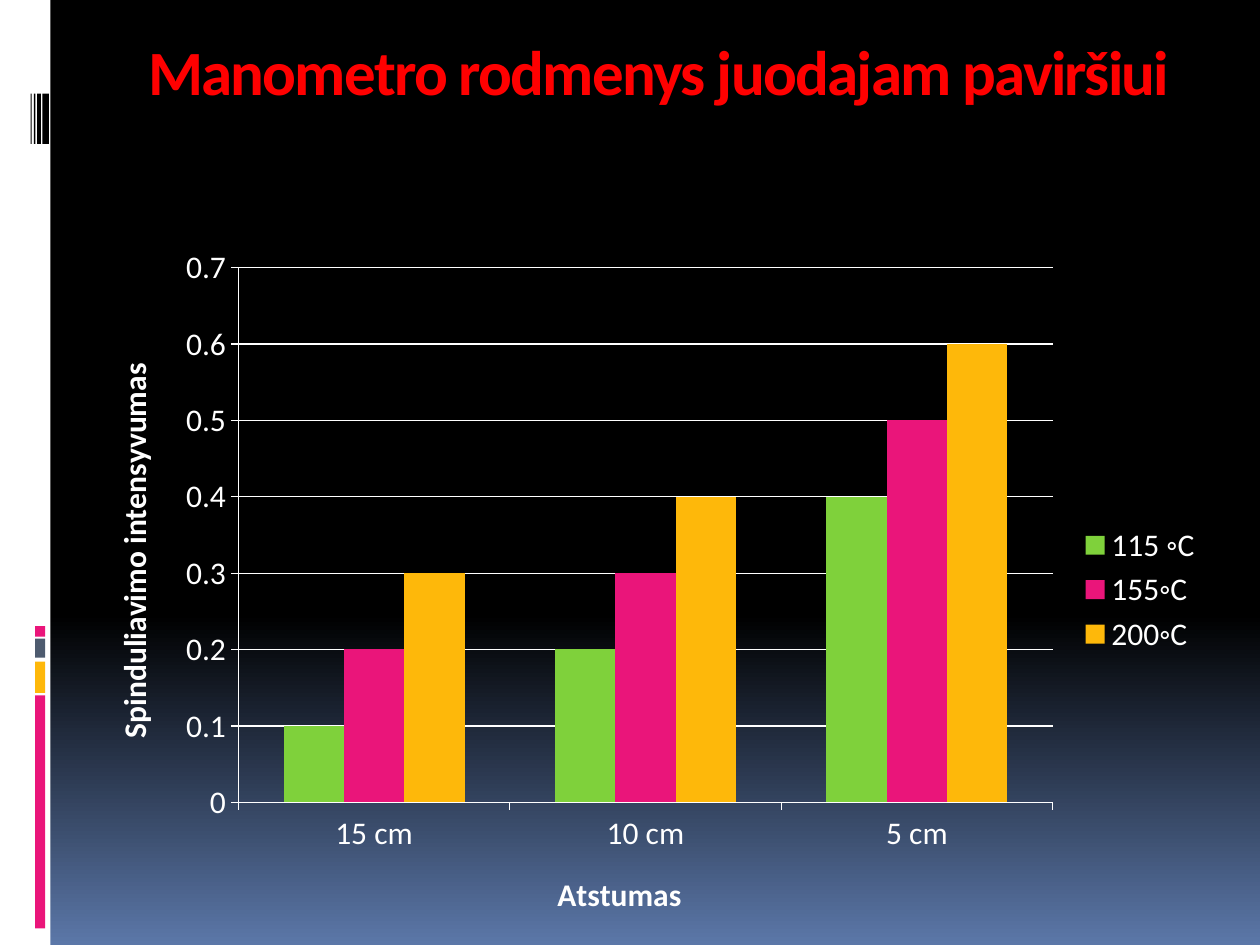
"""Build a slide with a clustered column chart of manometer readings."""
from pptx import Presentation
from pptx.chart.data import CategoryChartData
from pptx.dml.color import RGBColor
from pptx.enum.chart import XL_CHART_TYPE, XL_LEGEND_POSITION, XL_TICK_MARK
from pptx.enum.shapes import MSO_SHAPE
from pptx.enum.text import MSO_ANCHOR, PP_ALIGN
from pptx.util import Pt

RECT = MSO_SHAPE.RECTANGLE
COLUMN = XL_CHART_TYPE.COLUMN_CLUSTERED
RIGHT = XL_LEGEND_POSITION.RIGHT
OUT = XL_TICK_MARK.OUTSIDE
TOP = MSO_ANCHOR.TOP
CENTER = PP_ALIGN.CENTER

FONT = "Calibri"
COLORS = {
    "white": "FFFFFF", "black": "000000", "blue": "5B77A8", "slate": "4E5B6F",
    "red": "FF0000", "green": "7FD13B", "pink": "EA157A", "gold": "FEB80A",
}
TITLE = "Manometro rodmenys juodajam paviršiui"
CATS = ["15 cm", "10 cm", "5 cm"]
SERIES = [
    ("115 ◦C", (0.1, 0.2, 0.4), "green"),
    ("155◦C", (0.2, 0.3, 0.5), "pink"),
    ("200◦C", (0.3, 0.4, 0.6), "gold"),
]
AXES = {"cat": "Atstumas", "val": "Spinduliavimo intensyvumas"}
BLOCKS = [(357.8, 6, "pink"), (365, 10.8, "slate"),
          (378, 18, "gold"), (397.4, 133.2, "pink")]
BARS = [(17.5, 0.6), (19.4, 0.9), (21.2, 2.2), (24.2, 3.8)]


def rgb(name):
    return RGBColor.from_string(COLORS[name])


def style(font, size, color, bold=False):
    font.name, font.size, font.bold = FONT, Pt(size), bold
    font.color.rgb = rgb(color)


def add_rect(slide, box, color):
    rect = slide.shapes.add_shape(RECT, *map(Pt, box))
    rect.shadow.inherit = False
    rect.fill.solid()
    rect.fill.fore_color.rgb = rgb(color)
    rect.line.fill.background()


def add_back(slide):
    fill = slide.background.fill
    fill.gradient()
    fill.gradient_angle = 270
    for stop, (pos, color) in zip(fill.gradient_stops, [(0.65, "black"), (1, "blue")]):
        stop.position = pos
        stop.color.rgb = rgb(color)
    add_rect(slide, (0, 0, 28.8, 540), "white")
    for top, height, color in BLOCKS:
        add_rect(slide, (20, top, 5.8, height), color)
    for left, width in BARS:
        add_rect(slide, (left, 53.5, width, 28.8), "black")


def add_title(slide):
    frame = slide.shapes.add_textbox(Pt(70.5), Pt(15), Pt(612), Pt(99.5)).text_frame
    frame.word_wrap = True
    frame.vertical_anchor = TOP
    para = frame.paragraphs[0]
    para.alignment = CENTER
    run = para.add_run()
    run.text = TITLE
    style(para.font, 36, "red", True)
    run.font._element.set("spc", "-100")


def add_chart(slide):
    data = CategoryChartData()
    data.categories = CATS
    for name, vals, _ in SERIES:
        data.add_series(name, vals)
    chart = slide.shapes.add_chart(
        COLUMN, Pt(48), Pt(134), Pt(646.5), Pt(406), data).chart
    chart.has_title = False
    style(chart.font, 18, "white")
    chart.has_legend = True
    chart.legend.position = RIGHT
    chart.legend.include_in_layout = False
    plot = chart.plots[0]
    plot.gap_width, plot.overlap = 150, 0
    plot.vary_by_categories = False
    for series, (_, _, color) in zip(plot.series, SERIES):
        series.format.fill.solid()
        series.format.fill.fore_color.rgb = rgb(color)
    axes = {"cat": chart.category_axis, "val": chart.value_axis}
    for key, axis in axes.items():
        axis.major_tick_mark = OUT
        axis.format.line.color.rgb = rgb("white")
        axis.format.line.width = Pt(0.75)
        para = axis.axis_title.text_frame.paragraphs[0]
        para.add_run().text = AXES[key]
        style(para.font, 18, "white", True)
    val = axes["val"]
    val.minimum_scale, val.maximum_scale, val.major_unit = 0, 0.7, 0.1
    val.has_major_gridlines = True
    grid = val.major_gridlines.format.line
    grid.color.rgb = rgb("white")
    grid.width = Pt(0.75)


def main():
    deck = Presentation()
    deck.slide_width, deck.slide_height = Pt(720), Pt(540)
    slide = deck.slides.add_slide(deck.slide_layouts[6])
    add_back(slide)
    add_title(slide)
    add_chart(slide)
    deck.save("out.pptx")


if __name__ == "__main__":
    main()
